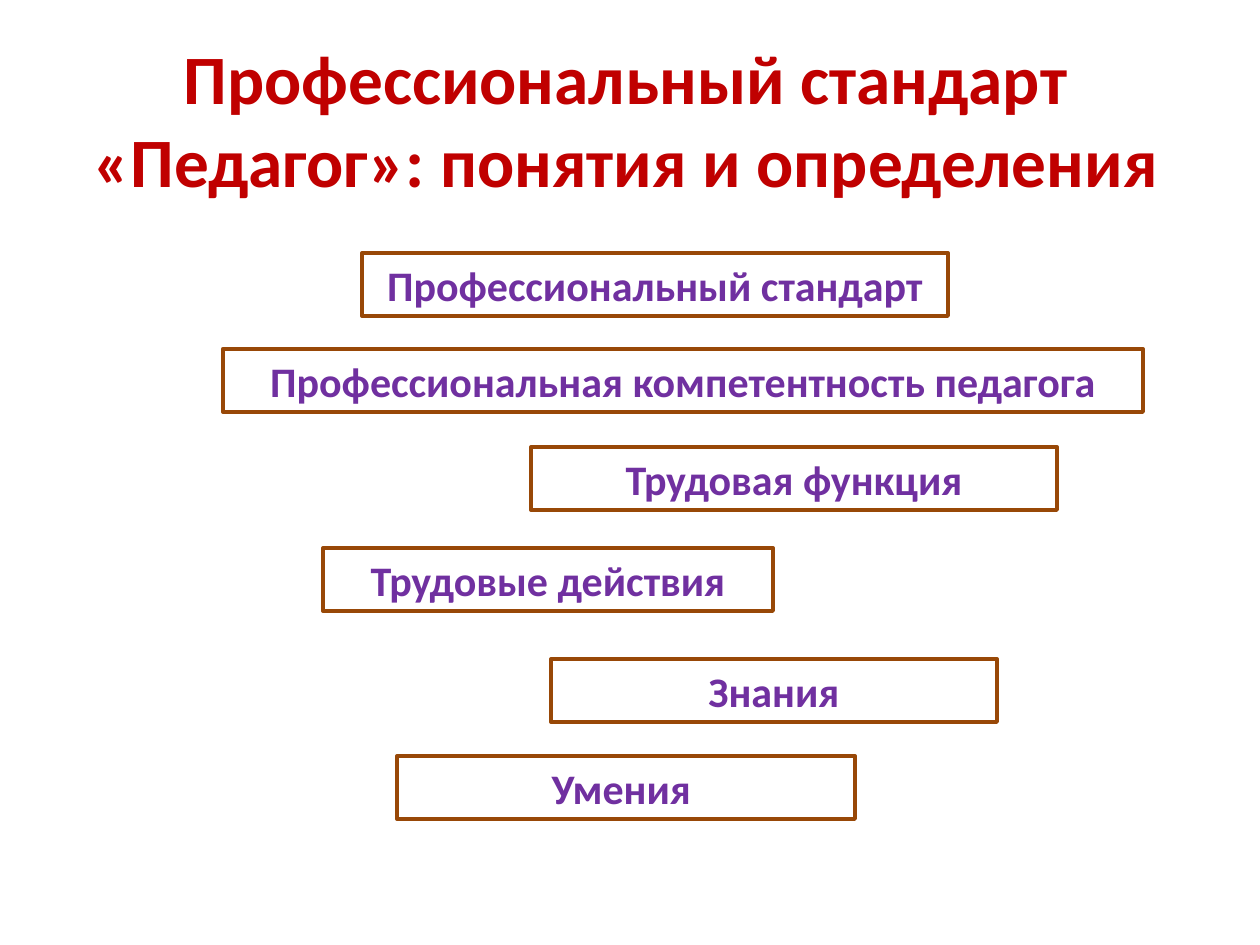
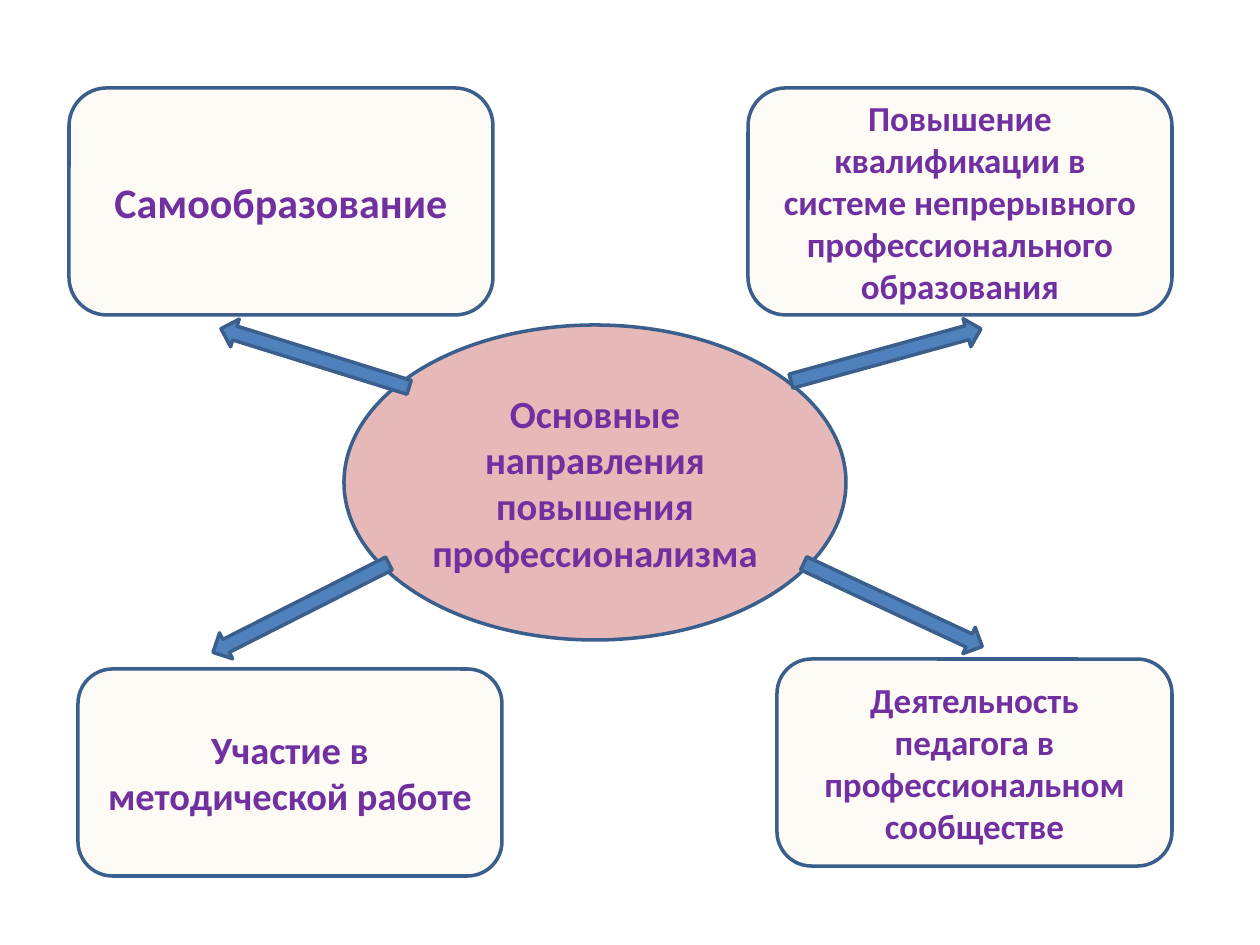
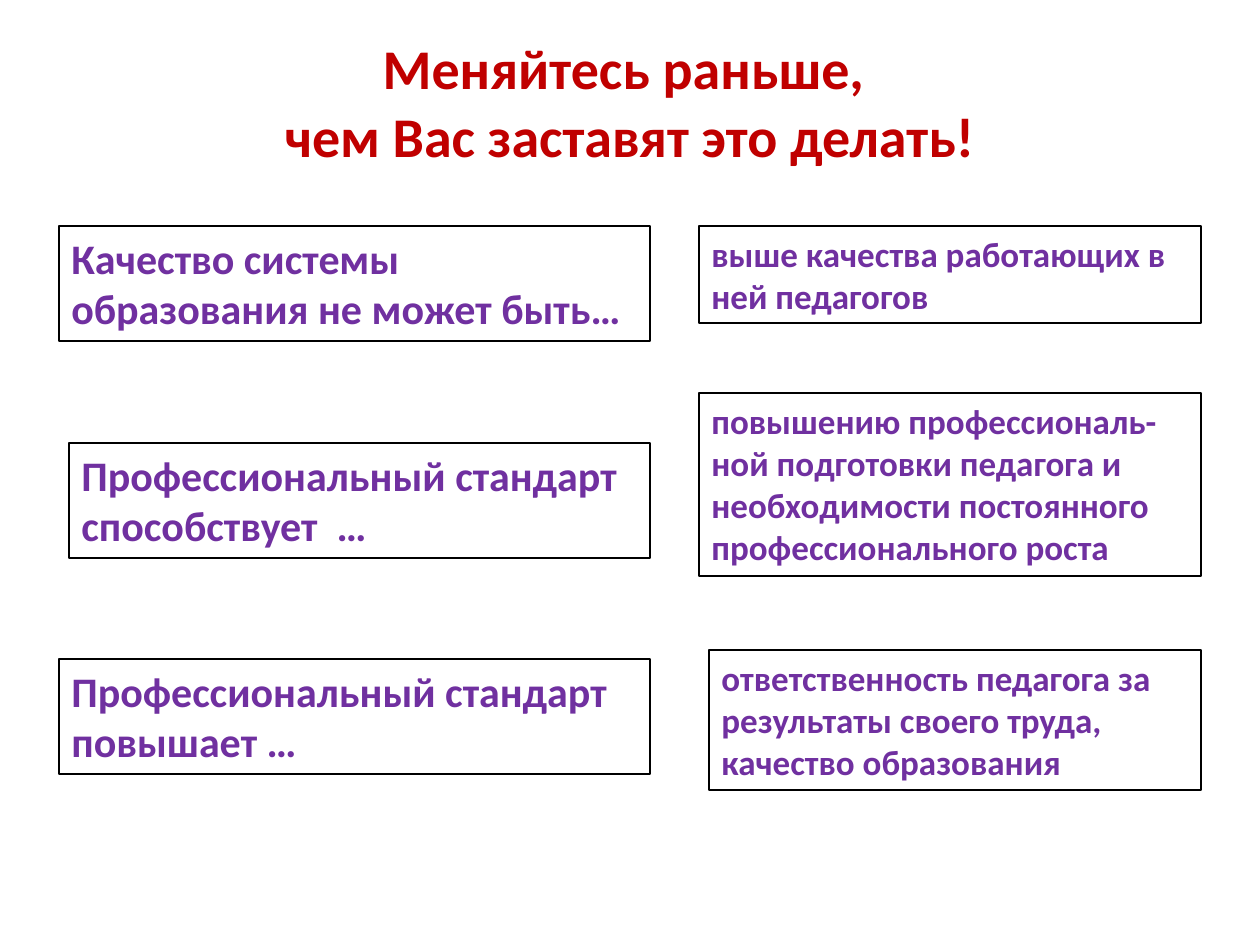
import dataclasses
import pptx
import pptx.util
import pptx.dml.color
import pptx.enum.shapes
import pptx.enum.text
import pptx.oxml.ns
import lxml.etree

Kind = pptx.enum.shapes.MSO_SHAPE
Align = pptx.enum.text.PP_ALIGN
Anchor = pptx.enum.text.MSO_ANCHOR
Fit = pptx.enum.text.MSO_AUTO_SIZE
SCALE = 914400 / 126


@dataclasses.dataclass(frozen=True)
class Theme:
    font: str = "Calibri"
    title: str = "C00000"
    text: str = "7030A0"
    brown: str = "984807"
    black: str = "000000"
    edge: str = "3A5F8C"
    arrow: str = "4F81BD"
    hub: str = "E6B9B8"
    card: str = "FDEADA"
    clear: int = 23
    head: float = 39.6
    motto: int = 32
    large: int = 24
    mid: int = 22
    small: int = 20
    bold: float = 2.25
    line: int = 2
    thin: int = 1


THEME = Theme()


def px(n):
    return pptx.util.Emu(round(n * SCALE))


def shade(code):
    return pptx.dml.color.RGBColor.from_string(code)


def place(box, x, y, w, h):
    return box[0] + x, box[1] + y, w, h


def write(frame, lines, size, color, align, anchor):
    frame.word_wrap = True
    frame.vertical_anchor = anchor
    for i, line in enumerate(lines):
        para = frame.paragraphs[0] if i == 0 else frame.add_paragraph()
        para.alignment = align
        run = para.add_run()
        run.text = line
        run.font.name = THEME.font
        run.font.size = pptx.util.Pt(size)
        run.font.bold = True
        run.font.color.rgb = shade(color)


def draw(slide, kind, box, edge, width, fill=None, alpha=None):
    shape = slide.shapes.add_shape(kind, *map(px, box))
    shape.shadow.inherit = False
    shape.line.color.rgb = shade(edge)
    shape.line.width = pptx.util.Pt(width)
    if fill is None:
        shape.fill.background()
        return shape
    shape.fill.solid()
    shape.fill.fore_color.rgb = shade(fill)
    if alpha:
        tone = shape.fill._xPr.find(".//" + pptx.oxml.ns.qn("a:srgbClr"))
        lxml.etree.SubElement(tone, pptx.oxml.ns.qn("a:alpha"), val=str(alpha * 1000))
    return shape


def title(slide, box, lines, size):
    frame = slide.shapes.add_textbox(*map(px, box)).text_frame
    write(frame, lines, size, THEME.title, Align.CENTER, Anchor.MIDDLE)


def label(slide, box, text, size, edge, width, align):
    frame = draw(slide, Kind.RECTANGLE, box, edge, width).text_frame
    write(frame, [text], size, THEME.text, align, Anchor.TOP)
    frame.auto_size = Fit.SHAPE_TO_FIT_TEXT


def terms(slide, box):
    rows = [
        (139, 0, 586, "Профессиональный стандарт"),
        (0, 96, 920, "Профессиональная компетентность педагога"),
        (308, 194, 526, "Трудовая функция"),
        (100, 295, 450, "Трудовые действия"),
        (328, 406, 446, "Знания"),
        (174, 503, 458, "Умения "),
    ]
    for x, y, w, text in rows:
        label(slide, place(box, x, y, w, 63), text, THEME.large,
              THEME.brown, THEME.bold, Align.CENTER)


def bubble(slide, kind, box, text, size, fill, alpha=None):
    shape = draw(slide, kind, box, THEME.edge, THEME.line, fill, alpha)
    write(shape.text_frame, [text], size, THEME.text, Align.CENTER, Anchor.MIDDLE)


def web(slide, box):
    bubble(slide, Kind.OVAL, place(box, 275, 237, 502, 315),
           "Основные направления повышения профессионализма", THEME.mid, THEME.hub)
    cards = [
        (0, 0, 424, 227, THEME.large, "Самообразование"),
        (679, 0, 424, 227, THEME.small,
         "Повышение квалификации в системе непрерывного профессионального образования"),
        (9, 581, 424, 207, THEME.mid, "Участие в методической работе"),
        (708, 571, 395, 207, THEME.small,
         "Деятельность педагога в профессиональном сообществе"),
    ]
    for x, y, w, h, size, text in cards:
        bubble(slide, Kind.ROUNDED_RECTANGLE, place(box, x, y, w, h),
               text, size, THEME.card, THEME.clear)
    long, thick = 197, 29
    for x, y, turn in [(246, 270, 197.3), (817, 267, 344.6),
                       (232, 520, 153.2), (824, 517, 25)]:
        spot = place(box, x - long / 2, y - thick / 2, long, thick)
        arrow = draw(slide, Kind.RIGHT_ARROW, spot, THEME.edge, THEME.line, THEME.arrow)
        arrow.rotation = turn


def pairs(slide, box):
    starts = [
        (0, 0, 591, "Качество системы образования не может быть…"),
        (10, 217, 581, "Профессиональный стандарт способствует  …"),
        (0, 433, 591, "Профессиональный стандарт повышает …"),
    ]
    ends = [
        (640, 0, 502, 97, "выше качества работающих в ней педагогов"),
        (640, 167, 502, 183, "повышению профессиональ-ной подготовки педагога и "
                             "необходимости постоянного профессионального роста"),
        (650, 424, 492, 140, "ответственность педагога за результаты своего труда, "
                             "качество образования"),
    ]
    cells = [(x, y, w, 115, text, THEME.large) for x, y, w, text in starts]
    cells += [(*cell, THEME.small) for cell in ends]
    for x, y, w, h, text, size in cells:
        label(slide, place(box, x, y, w, h), text, size,
              THEME.black, THEME.thin, Align.LEFT)


def main():
    deck = pptx.Presentation()
    deck.slide_width, deck.slide_height = px(1260), px(945)
    first, second, third = [deck.slides.add_slide(deck.slide_layouts[6]) for _ in range(3)]
    title(first, (59, 39, 1134, 158),
          ["Профессиональный стандарт «Педагог»: понятия и определения"], THEME.head)
    terms(first, (223, 253, 920, 566))
    web(second, (69, 88, 1103, 788))
    title(third, (63, 46, 1134, 110),
          ["Меняйтесь раньше, ", "чем Вас заставят это делать!"], THEME.motto)
    pairs(third, (59, 226, 1142, 564))
    deck.save("out.pptx")


if __name__ == "__main__":
    main()
